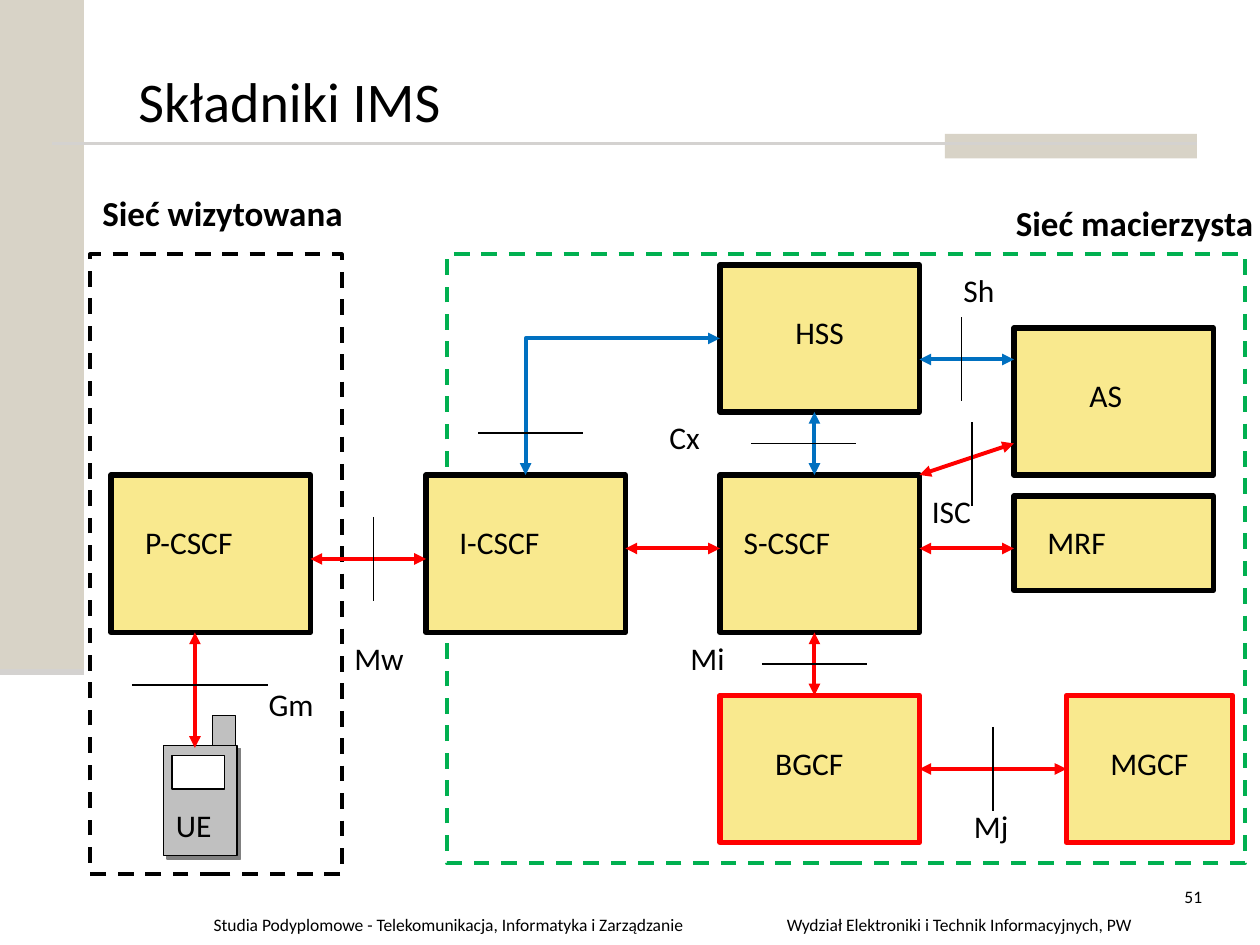
import pptx
import pptx.util
import pptx.dml.color
import pptx.enum.dml
import pptx.enum.shapes
import pptx.enum.text
import pptx.oxml
import pptx.oxml.ns

Pt = pptx.util.Pt
RGB = pptx.dml.color.RGBColor
KIND = pptx.enum.shapes.MSO_CONNECTOR
ALIGN = pptx.enum.text.PP_ALIGN
BLACK, WHITE = RGB(0, 0, 0), RGB(255, 255, 255)
SAND, RULE = RGB(0xD8, 0xD3, 0xC7), RGB(0xD4, 0xD2, 0xD0)
CREAM, GRAY = RGB(0xF9, 0xE9, 0x8E), RGB(0xC0, 0xC0, 0xC0)
RED, BLUE, GREEN = RGB(255, 0, 0), RGB(0, 0x70, 0xC0), RGB(0, 0xB0, 0x50)
WIDE = 114  # usual node width


def rect(slide, x, y, w, h, fill=None, line=None, width=0.75, dash=False):
    shape = slide.shapes.add_shape(
        pptx.enum.shapes.MSO_SHAPE.RECTANGLE, Pt(x), Pt(y), Pt(w), Pt(h))
    shape.shadow.inherit = False
    if fill is None:
        shape.fill.background()
    else:
        shape.fill.solid()
        shape.fill.fore_color.rgb = fill
    if line is None:
        shape.line.fill.background()
    else:
        shape.line.color.rgb = line
        shape.line.width = Pt(width)
    if dash:
        shape.line.dash_style = pptx.enum.dml.MSO_LINE.DASH
    return shape


def text(slide, x, y, w, h, words, size=18, bold=False, wrap=False, align=ALIGN.LEFT):
    box = slide.shapes.add_textbox(Pt(x), Pt(y), Pt(w), Pt(h))
    box.text_frame.word_wrap = wrap
    par = box.text_frame.paragraphs[0]
    par.text = words
    par.alignment = align
    par.font.name = "Calibri"
    par.font.size = Pt(size)
    par.font.bold = bold
    par.font.color.rgb = BLACK
    return box


def line(slide, x1, y1, x2, y2, color=BLACK, width=0.75, kind=KIND.STRAIGHT):
    wire = slide.shapes.add_connector(kind, Pt(x1), Pt(y1), Pt(x2), Pt(y2))
    wire.line.color.rgb = color
    wire.line.width = Pt(width)
    wire._element.spPr.append(pptx.oxml.parse_xml(
        "<a:effectLst %s/>" % pptx.oxml.ns.nsdecls("a")))
    return wire


def arrow(slide, x1, y1, x2, y2, color=RED, kind=KIND.STRAIGHT):
    wire = line(slide, x1, y1, x2, y2, color, 2.25, kind)
    for end in ("headEnd", "tailEnd"):
        wire.line._get_or_add_ln().append(pptx.oxml.parse_xml(
            '<a:%s %s type="triangle"/>' % (end, pptx.oxml.ns.nsdecls("a"))))
    return wire


def node(slide, x, y, w, h, name, dx, wide, dy=24, edge=BLACK):
    """Framed box with its name set in by dx, dy."""
    shape = rect(slide, x, y, w, h, CREAM, edge, 3)
    text(slide, x + dx, y + dy, wide, 29, name)
    return shape


def frame(slide, w, h):
    # Side band and title rule
    rect(slide, 0, 0, 48, 384, SAND)
    rect(slide, w - 180, 76.5, 144, 14, SAND)
    line(slide, 30, 82, w - 36, 82, RULE, 1.5)
    line(slide, 0, 384, 48, 384, RULE, 3.5)
    # Title
    title = text(slide, 72, 20, w - 108, 74, "Składniki IMS", 32, wrap=True)
    title.text_frame.vertical_anchor = pptx.enum.text.MSO_ANCHOR.MIDDLE
    # Footer
    text(slide, 115, h - 21.5, 321, 20,
         "Studia Podyplomowe - Telekomunikacja, Informatyka i Zarządzanie", 10, wrap=True)
    text(slide, 431, h - 21, 234, 20,
         "Wydział Elektroniki i Technik Informacyjnych, PW", 10, wrap=True, align=ALIGN.CENTER)
    text(slide, 659.5, h - 37.5, 34.5, 36, "51", 10, wrap=True, align=ALIGN.RIGHT)


def phone(slide, x, y, w, h):
    top = 17  # aerial height
    body = rect(slide, x, y + top, w, h - top, GRAY, BLACK)
    props = body._element.spPr
    props.remove(props.find(pptx.oxml.ns.qn("a:effectLst")))
    props.append(pptx.oxml.parse_xml(
        '<a:effectLst %s><a:outerShdw dist="35900" dir="2700000" algn="ctr">'
        '<a:srgbClr val="808080"/></a:outerShdw></a:effectLst>' % pptx.oxml.ns.nsdecls("a")))
    rect(slide, x + 5, y + 23, 30, 19, WHITE, BLACK)
    rect(slide, x + 28, y, 13, top, GRAY, BLACK)
    text(slide, x, y + 48, 35, 29, "UE")


def visit(slide, x, y, w, h):
    text(slide, x, y - 39.5, 153, 32, "Sieć wizytowana", 20, True)
    rect(slide, x, y, w, h, None, BLACK, 2.25, True)
    node(slide, x + 12, y + 126, WIDE, 90, "P-CSCF", 12.4, 65.5)
    phone(slide, x + 42, y + 263.5, 42, 80)
    # Gm link
    arrow(slide, x + 60, y + 282, x + 60, y + 216)
    line(slide, x + 24, y + 246, x + 102, y + 246)
    text(slide, x + 95, y + 242.5, 40, 29, "Gm")


def home(slide, x, y, w, h):
    text(slide, x + 318, y - 34, 151, 32, "Sieć macierzysta", 20, True)
    rect(slide, x, y, w, h, None, GREEN, 2.25, True)
    # Nodes
    left, mid, right = x - 12, x + 156, x + 324
    icscf = node(slide, left, y + 126, WIDE, 90, "I-CSCF", 12, 60.5)
    node(slide, mid, y + 126, WIDE, 90, "S-CSCF", 6.5, 65)
    hss = node(slide, mid, y + 6, WIDE, 84, "HSS", 36, 42.5)
    bgcf = node(slide, mid, y + 252, WIDE, 84, "BGCF", 24.5, 54, edge=RED)
    mgcf = node(slide, x + 354, y + 252, 95, 84, "MGCF", 18, 60, edge=RED)
    node(slide, right, y + 42, WIDE, 84, "AS", 36, 33)
    node(slide, right, y + 138, WIDE, 54, "MRF", 12, 48, dy=12)
    # Free links
    for x1, y1, x2, y2, color in (
            (102, 168, 156, 168, RED), (270, 168, 324, 168, RED),
            (210, 252, 210, 216, RED), (270, 126, 324, 108, RED),
            (210, 126, 210, 90, BLUE), (270, 60, 324, 60, BLUE)):
        arrow(slide, x + x1, y + y1, x + x2, y + y2, color)
    # Links joined at side middles
    pair = arrow(slide, mid + WIDE, y + 294, x + 354, y + 294)
    pair.begin_connect(bgcf, 3)
    pair.end_connect(mgcf, 1)
    bend = arrow(slide, mid, y + 48, left + WIDE / 2, y + 126, BLUE, KIND.ELBOW)
    bend._element.spPr.prstGeom.set("prst", "bentConnector2")
    bend.begin_connect(hss, 1)
    bend.end_connect(icscf, 0)
    # Interface ticks
    for dx, dy in ((18, 102), (174, 108), (180, 234)):
        line(slide, x + dx, y + dy, x + dx + 60, y + dy)
    for dx, dy in ((294, 36), (300, 96), (312, 270)):
        line(slide, x + dx, y + dy, x + dx, y + dy + 48)
    # Interface names
    for name, dx, dy, wide in (("Sh", 288, 6, 32.5), ("Cx", 120, 90, 32.5),
                               ("ISC", 270, 132, 37.5), ("Mi", 132, 216, 34.5),
                               ("Mj", 294, 312, 34.5)):
        text(slide, x + dx, y + dy, wide, 29, name)


def bridge(slide, x, y, w, h):
    """Mw link between the two networks."""
    arrow(slide, x, y + h / 2, x + w, y + h / 2)
    line(slide, x + 36, y, x + 36, y + h)
    text(slide, x + 18, y + h + 18, 42.5, 29, "Mw")


def main():
    deck = pptx.Presentation()
    deck.slide_width, deck.slide_height = Pt(720), Pt(540)
    slide = deck.slides.add_slide(deck.slide_layouts[6])
    frame(slide, 720, 540)
    visit(slide, 51.4, 145.4, 144, 354)
    home(slide, 255.4, 145.4, 456, 348)
    bridge(slide, 177.4, 295.4, 66, 48)
    deck.save("out.pptx")


if __name__ == "__main__":
    main()
